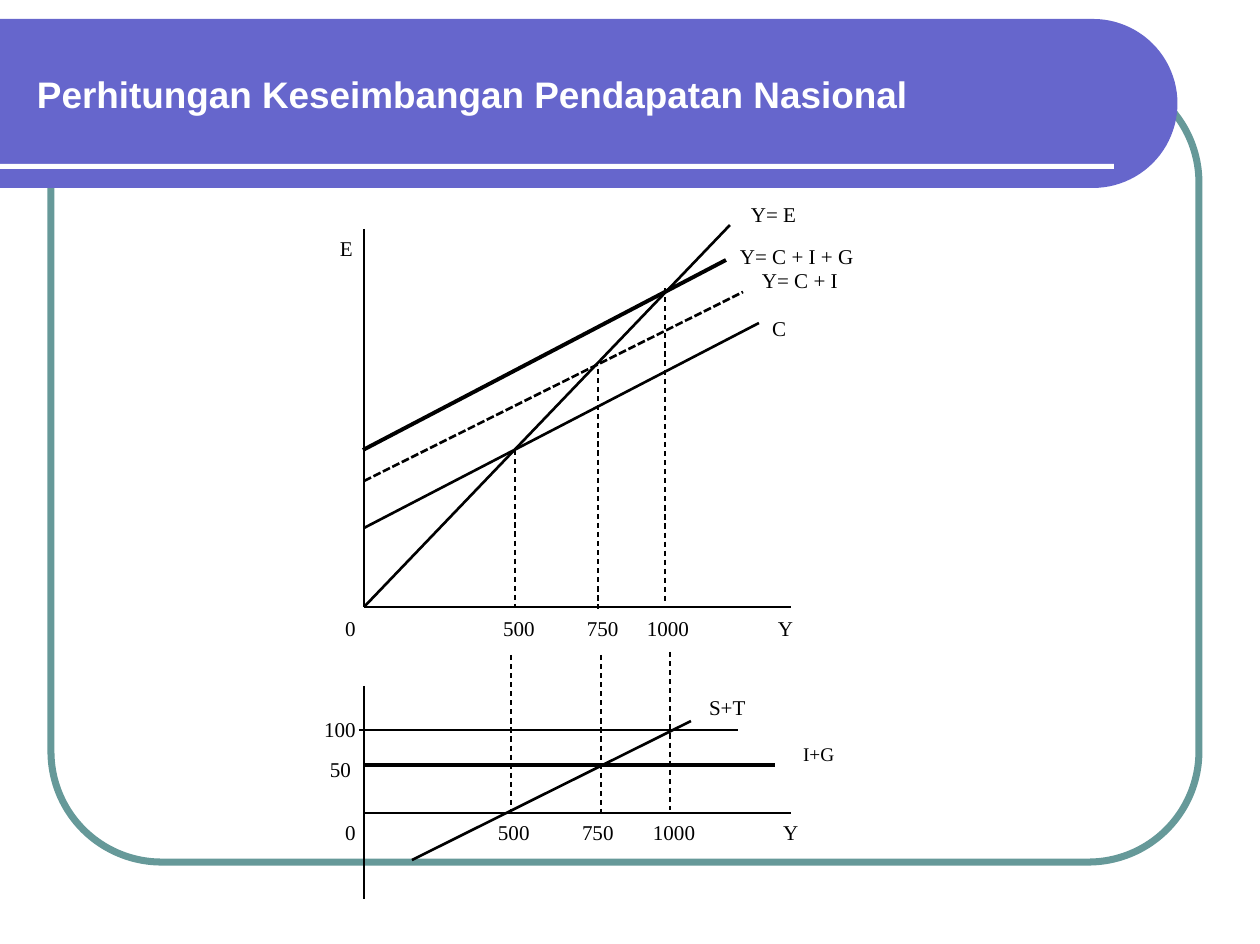
from math import cos, pi, sin

from lxml.etree import SubElement
from pptx import Presentation
from pptx.dml.color import RGBColor
from pptx.enum.dml import MSO_LINE
from pptx.enum.shapes import MSO_CONNECTOR, MSO_SHAPE
from pptx.enum.text import MSO_ANCHOR, MSO_AUTO_SIZE, PP_ALIGN
from pptx.oxml.ns import qn
from pptx.util import Emu, Pt

EMU_PER_PX = 7234
COLOURS = {"frame": "669999", "banner": "6666CC", "white": "FFFFFF", "ink": "000000"}

AXIS_X, AXIS_END = 364, 791
EXPENDITURE_BASE, SAVING_BASE = 607, 813

# x1, y1, x2, y2, width in points, dash
CURVES = [
    (AXIS_X, 229, AXIS_X, EXPENDITURE_BASE, 0.75, None),
    (AXIS_X, EXPENDITURE_BASE, AXIS_END, EXPENDITURE_BASE, 0.75, None),
    (AXIS_X, 528, 759, 323, 1.5, None),
    (AXIS_X, EXPENDITURE_BASE, 730, 225, 1.5, None),
    (AXIS_X, 481, 743, 292, 1.5, MSO_LINE.SQUARE_DOT),
    (363, 450, 726, 260, 2.25, None),
    (AXIS_X, 686, AXIS_X, 899, 0.75, None),
    (AXIS_X, SAVING_BASE, AXIS_END, SAVING_BASE, 0.75, None),
    (AXIS_X, 765, 775, 765, 2.25, None),
    (412, 860, 691, 721, 1.5, None),
    (359, 730, 738, 730, 0.75, None),
]

# x, top, bottom of the dashed lines at each equilibrium
DROPS = [
    (515, 450, EXPENDITURE_BASE), (598, 369, 609), (665, 288, 604),
    (511, 655, SAVING_BASE), (601, 655, SAVING_BASE), (670, 652, 810),
]

# text, left, top
LABELS = [
    ("E", 340, 236), ("Y= E", 751, 201), ("Y= C + I + G", 740, 243),
    ("Y= C + I", 762, 268), ("C", 772, 315), ("S+T", 709, 694),
    ("100", 324, 716), ("50", 330, 757),
]
AXIS_LABELS = ["0", "500", "750", "1000", "Y"]
AXIS_LABEL_ROWS = {615: [345, 503, 587, 647, 778], 820: [345, 498, 582, 653, 783]}


def px(length):
    return Emu(round(length * EMU_PER_PX))


def colour(name):
    return RGBColor.from_string(COLOURS[name])


def fill_plain(shape, name):
    shape.shadow.inherit = False
    shape.fill.solid()
    shape.fill.fore_color.rgb = colour(name)
    shape.line.fill.background()


def add_frame(slide):
    frame = slide.shapes.add_shape(
        MSO_SHAPE.ROUNDED_RECTANGLE, px(51), px(72), px(1148), px(790))
    frame.adjustments[0] = 0.14
    frame.shadow.inherit = False
    frame.fill.background()
    frame.line.color.rgb = colour("frame")
    frame.line.width = Pt(4)


def add_banner(slide):
    """Band that is square at the left edge and a half circle at the right."""
    centre_x, centre_y, radius, steps = 1093, 103.5, 84.5, 48
    angles = [pi * step / steps - pi / 2 for step in range(steps + 1)]
    arc = [(px(centre_x + radius * cos(a)), px(centre_y + radius * sin(a)))
           for a in angles]
    builder = slide.shapes.build_freeform(0, px(centre_y - radius))
    builder.add_line_segments(arc + [(0, px(centre_y + radius))], close=True)
    fill_plain(builder.convert_to_shape(), "banner")

    rule = slide.shapes.add_shape(MSO_SHAPE.RECTANGLE, 0, px(164), px(1114), px(5))
    fill_plain(rule, "white")


def set_text(shape, text, font_name, size, colour_name, bold=False):
    frame = shape.text_frame
    frame.text = text
    frame.word_wrap = False
    frame.auto_size = MSO_AUTO_SIZE.NONE
    frame.vertical_anchor = MSO_ANCHOR.TOP
    frame.margin_left = frame.margin_top = frame.margin_right = frame.margin_bottom = 0
    paragraph = frame.paragraphs[0]
    paragraph.alignment = PP_ALIGN.LEFT
    paragraph.font.name = font_name
    paragraph.font.size = Pt(size)
    paragraph.font.bold = bold
    paragraph.font.color.rgb = colour(colour_name)


def add_title(slide, text):
    title = slide.shapes.title
    title.left, title.top, title.width, title.height = px(37), px(72), px(875), px(46)
    set_text(title, text, "Arial", 21, "white", bold=True)


def add_label(slide, text, left, top, size=12):
    label = slide.shapes.add_textbox(px(left), px(top), px(11 * len(text)), px(26))
    set_text(label, text, "Times New Roman", size, "ink")


def add_line(slide, x1, y1, x2, y2, width, dash=None):
    line = slide.shapes.add_connector(
        MSO_CONNECTOR.STRAIGHT, px(x1), px(y1), px(x2), px(y2))
    line.line.color.rgb = colour("ink")
    line.line.width = Pt(width)
    if dash:
        line.line.dash_style = dash
    SubElement(line._element.spPr, qn("a:effectLst"))


def main():
    presentation = Presentation()
    presentation.slide_width, presentation.slide_height = px(1260), px(944)
    slide = presentation.slides.add_slide(presentation.slide_layouts[5])
    add_frame(slide)
    add_banner(slide)
    add_title(slide, "Perhitungan Keseimbangan Pendapatan Nasional")
    # The title starts lowest in the stack, so lift it above the banner.
    slide.shapes._spTree.append(slide.shapes.title._element)

    for curve in CURVES:
        add_line(slide, *curve)
    for x, top, bottom in DROPS:
        add_line(slide, x, top, x, bottom, 0.75, MSO_LINE.DASH)
    for label in LABELS:
        add_label(slide, *label)
    for top, lefts in AXIS_LABEL_ROWS.items():
        for text, left in zip(AXIS_LABELS, lefts):
            add_label(slide, text, left, top)
    add_label(slide, "I+G", 803, 742, size=11)
    presentation.save("out.pptx")


if __name__ == "__main__":
    main()
